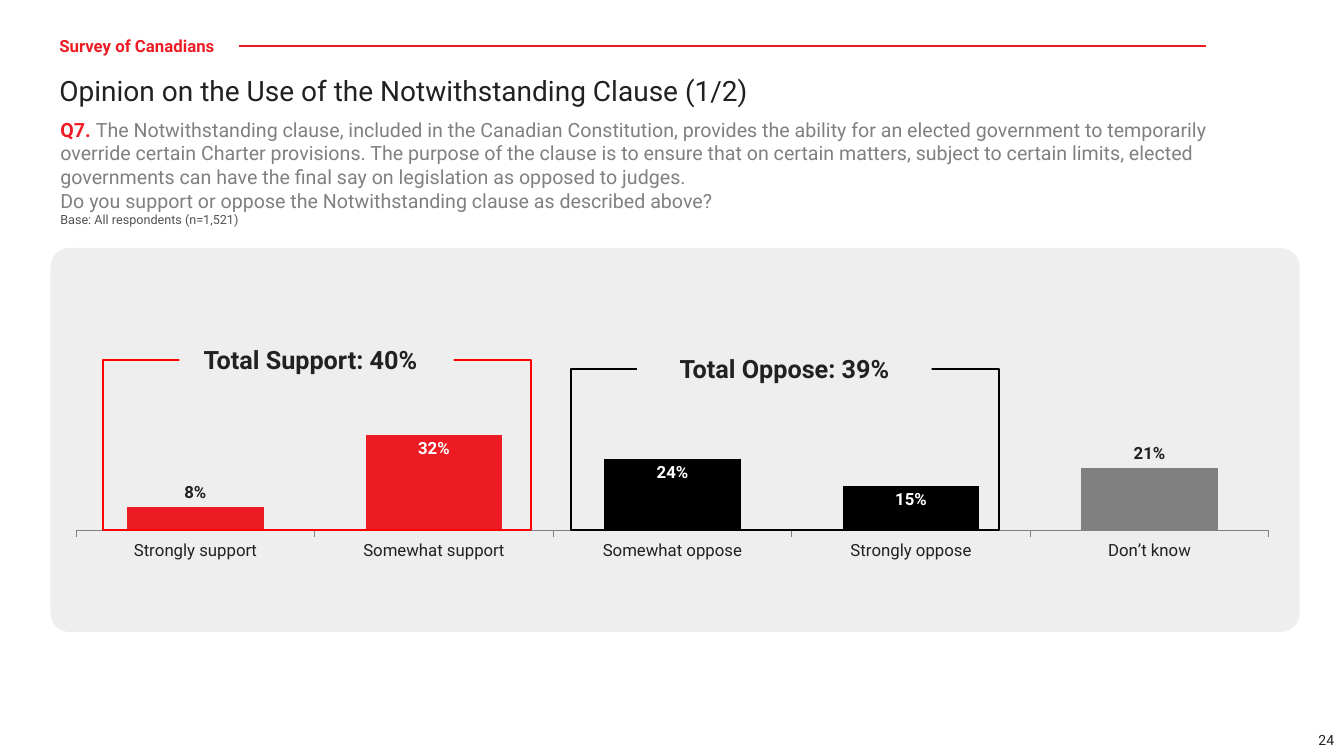
from lxml.etree import SubElement
from pptx import Presentation
from pptx.chart.data import CategoryChartData
from pptx.dml.color import RGBColor
from pptx.enum.chart import XL_CHART_TYPE, XL_LABEL_POSITION, XL_TICK_MARK
from pptx.enum.shapes import MSO_CONNECTOR, MSO_SHAPE
from pptx.enum.text import MSO_ANCHOR, PP_ALIGN
from pptx.oxml import parse_xml
from pptx.oxml.ns import nsdecls, qn
from pptx.util import Inches, Pt

RED = RGBColor(0xED, 0x1C, 0x24)
FRAME_RED = RGBColor(0xFF, 0x00, 0x00)
BLACK = RGBColor(0x00, 0x00, 0x00)
GRAY = RGBColor(0x80, 0x80, 0x80)
INK = RGBColor(0x21, 0x21, 0x21)
NOTE = RGBColor(0x51, 0x51, 0x56)
PANEL = RGBColor(0xEE, 0xEE, 0xEF)
WHITE = RGBColor(0xFF, 0xFF, 0xFF)
FONT = "Roboto"

QUESTION = (
    "The Notwithstanding clause, included in the Canadian Constitution, provides the "
    "ability for an elected government to temporarily override certain Charter provisions. "
    "The purpose of the clause is to ensure that on certain matters, subject to certain "
    "limits, elected governments can have the final say on legislation as opposed to judges."
)
ANSWERS = {
    "Strongly support": (0.08, RED),
    "Somewhat support": (0.32, RED),
    "Somewhat oppose": (0.24, BLACK),
    "Strongly oppose": (0.15, BLACK),
    "Don’t know": (0.21, GRAY),
}
OUTSIDE_LABELS = (0, 4)


def style_font(font, size, color, bold=False):
    """Set the face, size, colour and weight of a font."""
    font.name = FONT
    font.size = Pt(size)
    font.bold = bold
    font.color.rgb = color


def add_span(para, text, size, color, bold=False):
    """Add one styled run to a paragraph."""
    span = para.add_run()
    span.text = text
    style_font(span.font, size, color, bold)


def add_box(page, left, top, width, height, anchor=MSO_ANCHOR.TOP):
    """Add a wrapping text box and return it."""
    box = page.shapes.add_textbox(Inches(left), Inches(top), Inches(width), Inches(height))
    box.text_frame.word_wrap = True
    box.text_frame.vertical_anchor = anchor
    return box


def add_panel(page, kind, left, top, width, height, fill=None, line=None):
    """Add a flat preset shape with an optional fill and outline."""
    shape = page.shapes.add_shape(kind, Inches(left), Inches(top), Inches(width), Inches(height))
    shape.shadow.inherit = False
    if fill is None:
        shape.fill.background()
    else:
        shape.fill.solid()
        shape.fill.fore_color.rgb = fill
    if line is None:
        shape.line.fill.background()
    else:
        shape.line.color.rgb = line
        shape.line.width = Pt(1.5)
    return shape


def add_header(page, left, top, width):
    """Draw the section name, its red rule and the slide title."""
    middle = Inches(top + 0.13)
    rule = page.shapes.add_connector(
        MSO_CONNECTOR.STRAIGHT, Inches(left + 1.88), middle, Inches(left + width), middle)
    rule.line.color.rgb = RED
    rule.line.width = Pt(1.5)
    SubElement(rule.element.spPr, qn("a:effectLst"))
    section = add_box(page, left, top, 1.88, 0.28).text_frame.paragraphs[0]
    section.line_spacing = 0.9
    add_span(section, "Survey of Canadians", 12, RED, True)
    title = add_box(page, left, top + 0.39, width, 0.39).text_frame.paragraphs[0]
    title.line_spacing = 0.9
    add_span(title, "Opinion on the Use of the Notwithstanding Clause (1/2)", 20, INK)


def add_question(page, left, top, width, height):
    """Write the survey question and its base."""
    frame = add_box(page, left, top, width, height).text_frame
    para = frame.paragraphs[0]
    add_span(para, "Q7. ", 14, RED, True)
    add_span(para, QUESTION, 14, GRAY)
    add_span(frame.add_paragraph(),
             "Do you support or oppose the Notwithstanding clause as described above?", 14, GRAY)
    add_span(frame.add_paragraph(), "Base: All respondents (n=1,521)", 9, NOTE)


def add_answer_chart(page, left, top, width, height):
    """Draw the column chart of answers."""
    data = CategoryChartData(number_format="0%")
    data.categories = list(ANSWERS)
    data.add_series("Series 1", [share for share, color in ANSWERS.values()])
    chart = page.shapes.add_chart(
        XL_CHART_TYPE.COLUMN_CLUSTERED, Inches(left), Inches(top),
        Inches(width), Inches(height), data).chart
    chart.has_legend = False
    chart.has_title = False
    style_font(chart.font, 12, INK)

    shares = chart.value_axis
    shares.minimum_scale, shares.maximum_scale = 0, 0.8
    shares.has_major_gridlines = False
    shares.visible = False
    answers = chart.category_axis
    answers.major_tick_mark = XL_TICK_MARK.OUTSIDE
    answers.format.line.color.rgb = GRAY
    answers.format.line.width = Pt(0.75)
    style_font(answers.tick_labels.font, 12, INK)

    plot = chart.plots[0]
    plot.gap_width = 75
    plot.vary_by_categories = False
    series = plot.series[0]
    series.format.fill.solid()
    series.format.fill.fore_color.rgb = RED
    labels = series.data_labels
    labels.show_value = True
    labels.number_format = "0%"
    labels.number_format_is_linked = False
    labels.position = XL_LABEL_POSITION.INSIDE_END
    style_font(labels.font, 12, WHITE, True)
    for index, (share, color) in enumerate(ANSWERS.values()):
        point = series.points[index]
        point.format.fill.solid()
        point.format.fill.fore_color.rgb = color
        if index in OUTSIDE_LABELS:
            style_font(point.data_label.font, 12, INK, True)
            point.data_label.position = XL_LABEL_POSITION.OUTSIDE_END

    area = chart.element.chart.plotArea
    for layout in area.findall(qn("c:layout")):
        area.remove(layout)
    area.insert(0, parse_xml(
        f'<c:layout {nsdecls("c")}><c:manualLayout><c:layoutTarget val="inner"/>'
        '<c:xMode val="edge"/><c:yMode val="edge"/><c:x val="0"/><c:y val="0.012"/>'
        '<c:w val="1"/><c:h val="0.668"/></c:manualLayout></c:layout>'))


def add_total(page, left, top, height, color, text, label_left, label_width, right_inset=0.1):
    """Frame a pair of columns and set their total over the top edge."""
    add_panel(page, MSO_SHAPE.RECTANGLE, left, top, 4.25, height, line=color)
    label = add_panel(page, MSO_SHAPE.RECTANGLE, left + label_left, top - 0.2,
                      label_width, 0.4, fill=PANEL)
    frame = label.text_frame
    frame.word_wrap = True
    frame.margin_right = Inches(right_inset)
    frame.vertical_anchor = MSO_ANCHOR.MIDDLE
    para = frame.paragraphs[0]
    para.alignment = PP_ALIGN.CENTER
    add_span(para, text, 18, INK, True)


def add_page_number(page, left, top, width, height):
    """Write the page number at the right."""
    para = add_box(page, left, top, width, height, MSO_ANCHOR.MIDDLE).text_frame.paragraphs[0]
    para.alignment = PP_ALIGN.RIGHT
    add_span(para, "24", 10, INK)


def main():
    """Build and save the slide."""
    deck = Presentation()
    deck.slide_width, deck.slide_height = Inches(13.33), Inches(7.5)
    page = deck.slides.add_slide(deck.slide_layouts[6])
    add_header(page, 0.49, 0.33, 11.47)
    add_question(page, 0.5, 1.12, 12.25, 1.43)
    panel = add_panel(page, MSO_SHAPE.ROUNDED_RECTANGLE, 0.5, 2.46, 12.39, 3.81, fill=PANEL)
    panel.adjustments[0] = 0.05
    add_answer_chart(page, 0.75, 2.84, 11.84, 3.57)
    add_total(page, 1.02, 3.57, 1.69, FRAME_RED, "Total Support: 40%", 0.76, 2.72, 0.22)
    add_total(page, 5.66, 3.66, 1.6, BLACK, "Total Oppose: 39%", 0.66, 2.92)
    add_page_number(page, 12.09, 7.18, 1.24, 0.32)
    deck.save("out.pptx")


if __name__ == "__main__":
    main()
